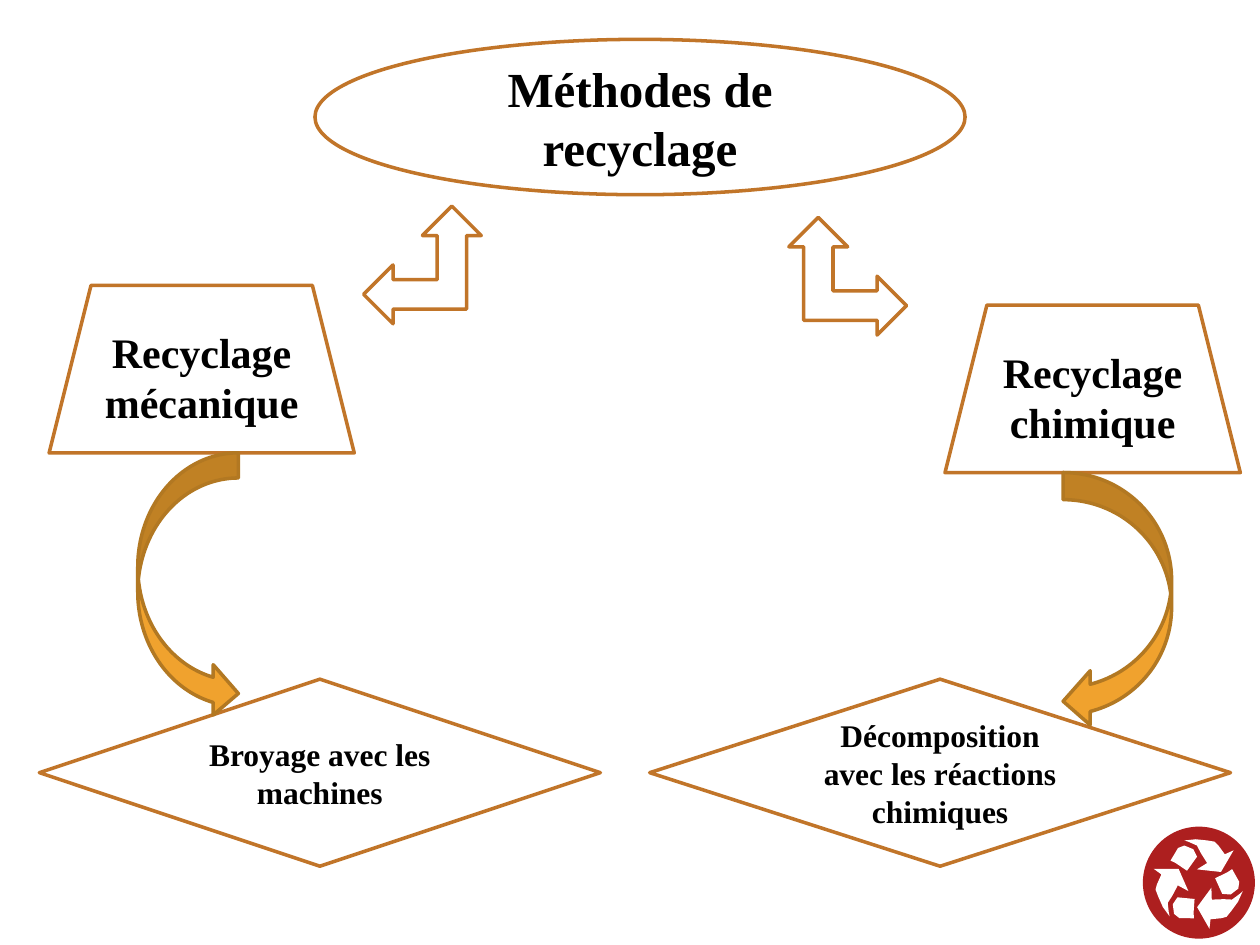
from math import cos, radians, sin

from pptx import Presentation
from pptx.dml.color import RGBColor
from pptx.enum.shapes import MSO_SHAPE as Shape
from pptx.enum.text import MSO_ANCHOR as Anchor, PP_ALIGN as Align
from pptx.util import Pt

WHITE, BROWN, RED = "FFFFFF", "C17529", "AD1F1F"


def paint(shape, fill, line=None):
    shape.shadow.inherit = False
    shape.fill.solid()
    shape.fill.fore_color.rgb = RGBColor.from_string(fill)
    if line:
        shape.line.color.rgb = RGBColor.from_string(line)
        shape.line.width = Pt(2)
    else:
        shape.line.fill.background()


def write(shape, text, size=18, font="Times New Roman", color="000000", bold=True):
    frame = shape.text_frame
    frame.word_wrap = True
    frame.vertical_anchor = Anchor.MIDDLE
    frame.text = text
    for para in frame.paragraphs:
        para.alignment = Align.CENTER
        for span in para.runs:
            span.font.size = Pt(size)
            span.font.name = font
            span.font.bold = bold
            span.font.color.rgb = RGBColor.from_string(color)


deck = Presentation()
deck.slide_width, deck.slide_height = Pt(720), Pt(540)
page = deck.slides.add_slide(deck.slide_layouts[6])
shapes = page.shapes

labelled_boxes = [
    (Shape.OVAL, 180, 22.5, 371.5, 88.75, "Méthodes de recyclage", 28),
    (Shape.TRAPEZOID, 28.1, 163.1, 174.4, 95.75, "Recyclage\nmécanique", 24),
    (Shape.TRAPEZOID, 540, 174.4, 168.75, 95.75, "Recyclage\nchimique", 24),
    (Shape.FLOWCHART_DECISION, 22.5, 388.1, 320.6, 106.9, "Broyage avec les machines", 18),
    (Shape.FLOWCHART_DECISION, 371.25, 388.1, 331.9, 106.9,
     "Décomposition avec les réactions chimiques", 18),
]
for kind, left, top, width, height, text, size in labelled_boxes:
    box = shapes.add_shape(kind, Pt(left), Pt(top), Pt(width), Pt(height))
    paint(box, WHITE, BROWN)
    write(box, text, size=size)

arrows = [
    (Shape.LEFT_UP_ARROW, 207.8, 117.8, 67.25, 67.25, 0, WHITE, BROWN),
    (Shape.LEFT_UP_ARROW, 450.75, 124.25, 67.25, 67.25, 90, WHITE, BROWN),
    (Shape.CURVED_LEFT_ARROW, 607.5, 270, 62, 146.25, 0, "F0A22E", "B27822"),
    (Shape.CURVED_RIGHT_ARROW, 78.75, 258.75, 57.5, 151.9, 0, "F0A22E", "B27822"),
]
for kind, left, top, width, height, angle, fill, line in arrows:
    arrow = shapes.add_shape(kind, Pt(left), Pt(top), Pt(width), Pt(height))
    arrow.rotation = angle
    paint(arrow, fill, line)

center_x, center_y, radius = 685.1, 504.4, 32
disc = shapes.add_shape(Shape.OVAL, Pt(center_x - radius), Pt(center_y - radius),
                        Pt(2 * radius), Pt(2 * radius))
paint(disc, RED)

arrow_head = [(4.7, -11.2), (-1.1, -7.6), (12.6, -6.1), (19.8, -18.4), (14.8, -16.2),
              (11.2, -21.2), (9, -23.4), (4.7, -24.1), (-1.8, -24.8), (-8.3, -24.1),
              (-6.1, -23.4), (-1.1, -21.2), (1.1, -16.9)]
arrow_tail = [(-13.3, -11.2), (-6.8, -6.8), (-1.1, -14.8), (-3.2, -19.1),
              (-8.3, -21.2), (-11.9, -19.8), (-16.2, -12.6)]
for angle in (0, 120, 240):
    cosine, sine = cos(radians(angle)), sin(radians(angle))
    for outline in (arrow_head, arrow_tail):
        points = [(Pt(center_x + x * cosine - y * sine), Pt(center_y + x * sine + y * cosine))
                  for x, y in outline]
        builder = shapes.build_freeform(*points[0])
        builder.add_line_segments(points[1:], close=True)
        paint(builder.convert_to_shape(), WHITE)

deck.save("out.pptx")
